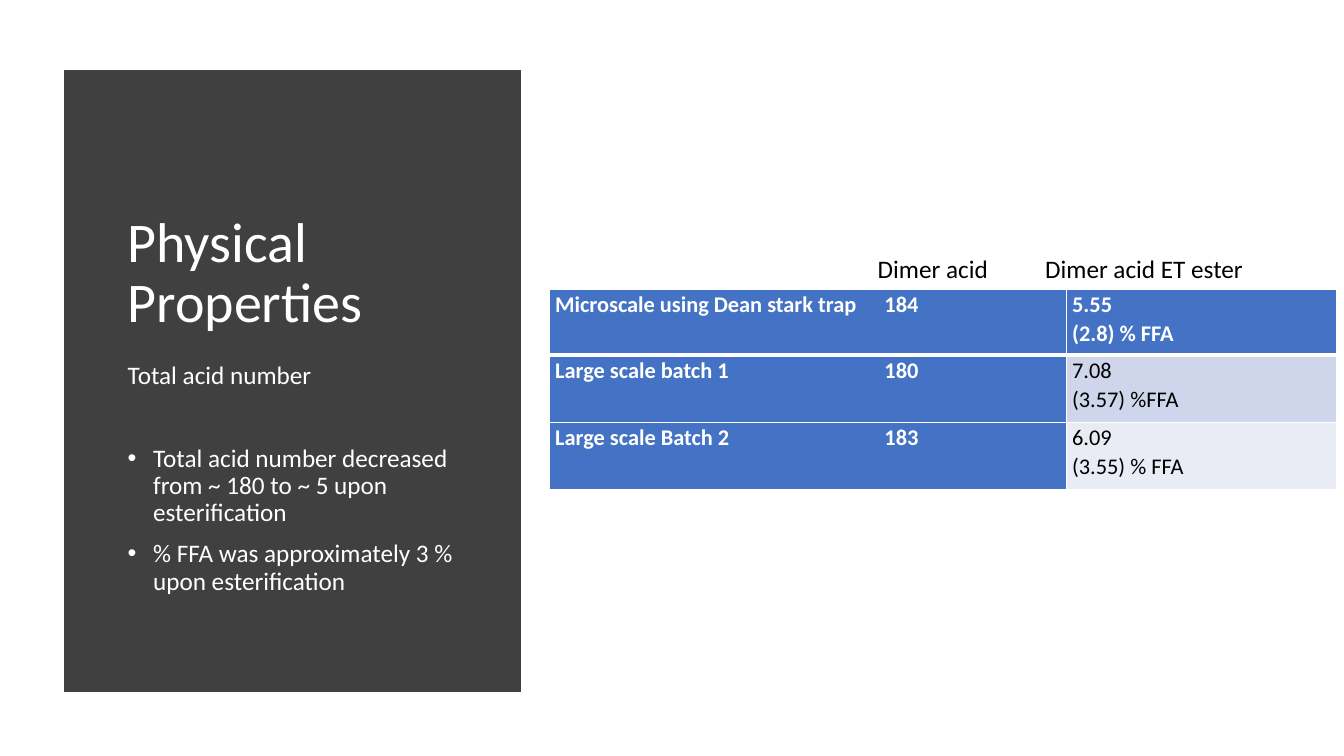
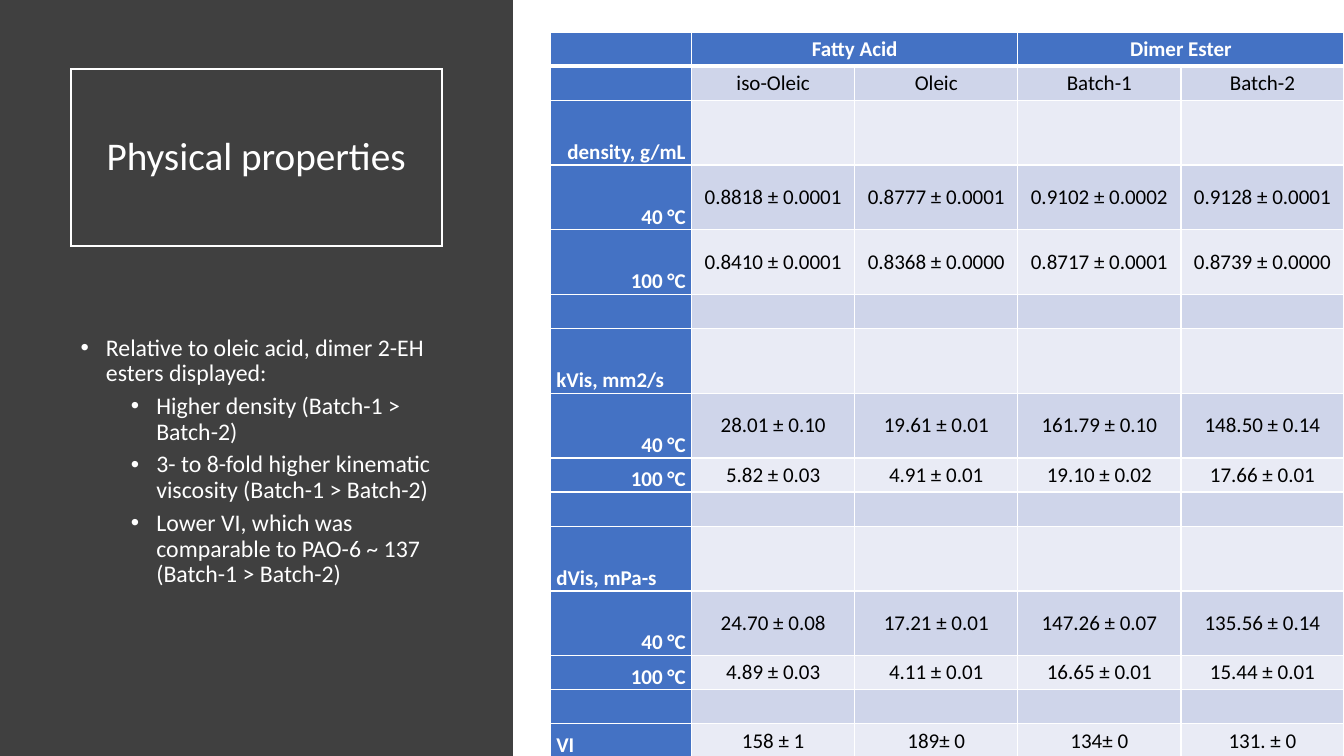
from dataclasses import dataclass
from typing import NamedTuple

from lxml.etree import SubElement
from pptx import Presentation
from pptx.dml.color import RGBColor
from pptx.enum.shapes import MSO_SHAPE
from pptx.enum.text import MSO_ANCHOR, PP_ALIGN
from pptx.oxml.ns import qn
from pptx.util import Cm, Pt

FONT = "Calibri"
COLORS = {
    "panel": "404040",
    "white": "FFFFFF",
    "black": "000000",
    "header": "4472C4",
    "odd_band": "CFD5EA",
    "even_band": "E9EBF5",
}


class Box(NamedTuple):
    """Left, top, width and height in centimetres."""
    left: float
    top: float
    width: float
    height: float

    def lengths(self) -> list:
        return [Cm(value) for value in self]


@dataclass
class Line:
    """One paragraph; a bullet hangs at the given indent in centimetres."""
    text: str
    size: float = 18
    color: str = "white"
    bold: bool = False
    align: PP_ALIGN = PP_ALIGN.LEFT
    spacing: float = 0.9
    before: float = 0
    after: float = 0
    bullet_indent: float = 0
    tab: float = 0


@dataclass
class Row:
    height: float
    label: str
    values: tuple = ("", "", "", "")
    label_align: PP_ALIGN = PP_ALIGN.RIGHT


@dataclass
class TableStyle:
    size: float
    spacing: float
    label_anchor: MSO_ANCHOR
    value_anchor: MSO_ANCHOR
    value_align: PP_ALIGN
    label_tab: float = 0


def rgb(name: str) -> RGBColor:
    return RGBColor.from_string(COLORS[name])


# Text
def write_lines(frame, lines: list[Line]) -> None:
    for index, line in enumerate(lines):
        paragraph = frame.add_paragraph() if index else frame.paragraphs[0]
        paragraph.text = line.text
        paragraph.alignment = line.align
        paragraph.line_spacing = line.spacing
        paragraph.space_before = Pt(line.before)
        paragraph.space_after = Pt(line.after)
        properties = paragraph._p.get_or_add_pPr()
        if line.bullet_indent:
            properties.set("marL", str(Cm(line.bullet_indent)))
            properties.set("indent", str(-Cm(0.64)))
            SubElement(properties, qn("a:buFont"), typeface="Arial")
            SubElement(properties, qn("a:buChar"), char="•")
        if line.tab:
            tabs = SubElement(properties, qn("a:tabLst"))
            SubElement(tabs, qn("a:tab"), pos=str(Cm(line.tab)), algn="l")
        font = paragraph.font
        font.name, font.size, font.bold = FONT, Pt(line.size), line.bold
        font.color.rgb = rgb(line.color)


def add_text(slide, box: Box, lines: list[Line], anchor=MSO_ANCHOR.TOP) -> None:
    frame = slide.shapes.add_textbox(*box.lengths()).text_frame
    frame.word_wrap = True
    frame.vertical_anchor = anchor
    write_lines(frame, lines)


# Rectangles
def add_rectangle(slide, box: Box, fill: str = "", line: str = "", width: float = 0):
    shape = slide.shapes.add_shape(MSO_SHAPE.RECTANGLE, *box.lengths())
    shape.shadow.inherit = False
    if fill:
        shape.fill.solid()
        shape.fill.fore_color.rgb = rgb(fill)
    else:
        shape.fill.background()
    if line:
        shape.line.color.rgb = rgb(line)
        shape.line.width = Pt(width)
        SubElement(shape._element.spPr.find(qn("a:ln")), qn("a:miter"), lim="800000")
    else:
        shape.line.fill.background()
    return shape


# Tables
def set_borders(cell, bottom_width: float, top_width: float) -> None:
    properties = cell._tc.get_or_add_tcPr()
    widths = {"a:lnL": 1, "a:lnR": 1, "a:lnT": top_width, "a:lnB": bottom_width}
    for tag, width in widths.items():
        border = SubElement(properties, qn(tag), w=str(Pt(width)))
        fill = SubElement(border, qn("a:solidFill"))
        SubElement(fill, qn("a:srgbClr"), val=COLORS["white"])


def add_banded_table(slide, left: float, top: float, columns: list[float],
                     rows: list[Row], style: TableStyle):
    box = Box(left, top, sum(columns), sum(row.height for row in rows))
    table = slide.shapes.add_table(len(rows), len(columns), *box.lengths()).table
    table.horz_banding = False
    for column, width in zip(table.columns, columns):
        column.width = Cm(width)
    for row_index, row in enumerate(rows):
        table.rows[row_index].height = Cm(row.height)
        for column_index, text in enumerate((row.label, *row.values)):
            cell = table.cell(row_index, column_index)
            is_label = column_index == 0
            is_header = is_label or row_index == 0
            cell.margin_left = cell.margin_right = Cm(0.15)
            cell.margin_top = cell.margin_bottom = 0
            cell.vertical_anchor = style.label_anchor if is_label else style.value_anchor
            set_borders(cell, 1 if row_index else 3, 3 if row_index == 1 else 1)
            band = "odd_band" if row_index % 2 else "even_band"
            cell.fill.solid()
            cell.fill.fore_color.rgb = rgb("header" if is_header else band)
            write_lines(cell.text_frame, [
                Line(part, style.size, "white" if is_header else "black", is_header,
                     row.label_align if is_label else style.value_align,
                     style.spacing, tab=style.label_tab if is_label else 0)
                for part in text.split("\n")])
    return table


# Slide 1: acid numbers
def build_acid_number_slide(slide) -> None:
    add_rectangle(slide, Box(1.78, 1.93, 11.18, 15.34), "panel", "panel", 10)
    add_text(slide, Box(2.97, 2.82, 8.74, 5.74),
             [Line("Physical Properties", 40)], MSO_ANCHOR.BOTTOM)
    add_text(slide, Box(2.97, 9.02, 8.74, 6.2), [
        Line("Total acid number"),
        Line("Total acid number decreased from ~ 180 to ~ 5 upon esterification",
             before=39.5, bullet_indent=0.64),
        Line("% FFA was approximately 3 % upon esterification",
             before=10, bullet_indent=0.64),
    ])
    for left, width, heading in [(26.09, 5.69, "Dimer acid ET ester"),
                                 (21.87, 3.35, "Dimer acid")]:
        add_text(slide, Box(left, 6.27, width, 1.02),
                 [Line(heading, color="black", spacing=1.0, after=6)])
    rows = [
        Row(1.65, "Microscale using Dean stark trap\t184", ("5.55\n(2.8) % FFA",), PP_ALIGN.LEFT),
        Row(1.7, "Large scale batch 1\t180", ("7.08\n(3.57) %FFA",), PP_ALIGN.LEFT),
        Row(1.7, "Large scale Batch 2\t183", ("6.09\n(3.55) % FFA",), PP_ALIGN.LEFT),
    ]
    style = TableStyle(16, 1.07, MSO_ANCHOR.TOP, MSO_ANCHOR.TOP, PP_ALIGN.LEFT, label_tab=8.3)
    add_banded_table(slide, 13.84, 7.29, [13.03, 6.81], rows, style)


# Slide 2: density and viscosity
def build_viscosity_slide(slide) -> None:
    add_rectangle(slide, Box(0, 0, 12.93, 19.05), "panel")
    title = add_rectangle(slide, Box(1.78, 1.73, 9.35, 4.47), line="white", width=1.5)
    title.text_frame.word_wrap = True
    title.text_frame.vertical_anchor = MSO_ANCHOR.MIDDLE
    write_lines(title.text_frame, [Line("Physical properties", 28, align=PP_ALIGN.CENTER)])

    findings = [
        "Higher density (Batch-1 > Batch-2)",
        "3- to 8-fold higher kinematic viscosity (Batch-1 > Batch-2)",
        "Lower VI, which was comparable to PAO-6 ~ 137 (Batch-1 > Batch-2)",
    ]
    add_text(slide, Box(1.78, 8.33, 9.35, 8.5), [
        Line("Relative to oleic acid, dimer 2-EH esters displayed:", 17, bullet_indent=0.64),
        *[Line(finding, 17, before=5, bullet_indent=1.91) for finding in findings],
    ])

    low, high = 0.86, 1.63
    left = PP_ALIGN.LEFT
    rows = [
        Row(low, "", ("Fatty Acid", "", "Dimer Ester", "")),
        Row(low, "", ("iso-Oleic", "Oleic", "Batch-1", "Batch-2")),
        Row(high, "density, g/mL"),
        Row(high, "40 °C", ("0.8818 ± 0.0001", "0.8777 ± 0.0001",
                            "0.9102 ± 0.0002", "0.9128 ± 0.0001")),
        Row(high, "100 °C", ("0.8410 ± 0.0001", "0.8368 ± 0.0000",
                             "0.8717 ± 0.0001", "0.8739 ± 0.0000")),
        Row(low, ""),
        Row(high, "kVis, mm2/s", label_align=left),
        Row(high, "40 °C", ("28.01 ± 0.10", "19.61 ± 0.01", "161.79 ± 0.10", "148.50 ± 0.14")),
        Row(low, "100 °C", ("5.82 ± 0.03", "4.91 ± 0.01", "19.10 ± 0.02", "17.66 ± 0.01")),
        Row(low, ""),
        Row(high, "dVis, mPa-s", label_align=left),
        Row(high, "40 °C", ("24.70 ± 0.08", "17.21 ± 0.01", "147.26 ± 0.07", "135.56 ± 0.14")),
        Row(low, "100 °C", ("4.89 ± 0.03", "4.11 ± 0.01", "16.65 ± 0.01", "15.44 ± 0.01")),
        Row(low, ""),
        Row(low, "VI", ("158 ± 1", "189± 0", "134± 0", "131. ± 0"), left),
    ]
    style = TableStyle(15, 1.0, MSO_ANCHOR.BOTTOM, MSO_ANCHOR.MIDDLE, PP_ALIGN.CENTER)
    table = add_banded_table(slide, 13.87, 0.81, [3.56] + [4.11] * 4, rows, style)
    for first in (1, 3):
        table.cell(0, first).merge(table.cell(0, first + 1))


def main() -> None:
    presentation = Presentation()
    presentation.slide_width, presentation.slide_height = Cm(33.87), Cm(19.05)
    blank_layout = presentation.slide_layouts[6]
    for build in (build_acid_number_slide, build_viscosity_slide):
        build(presentation.slides.add_slide(blank_layout))
    presentation.save("out.pptx")


if __name__ == "__main__":
    main()
